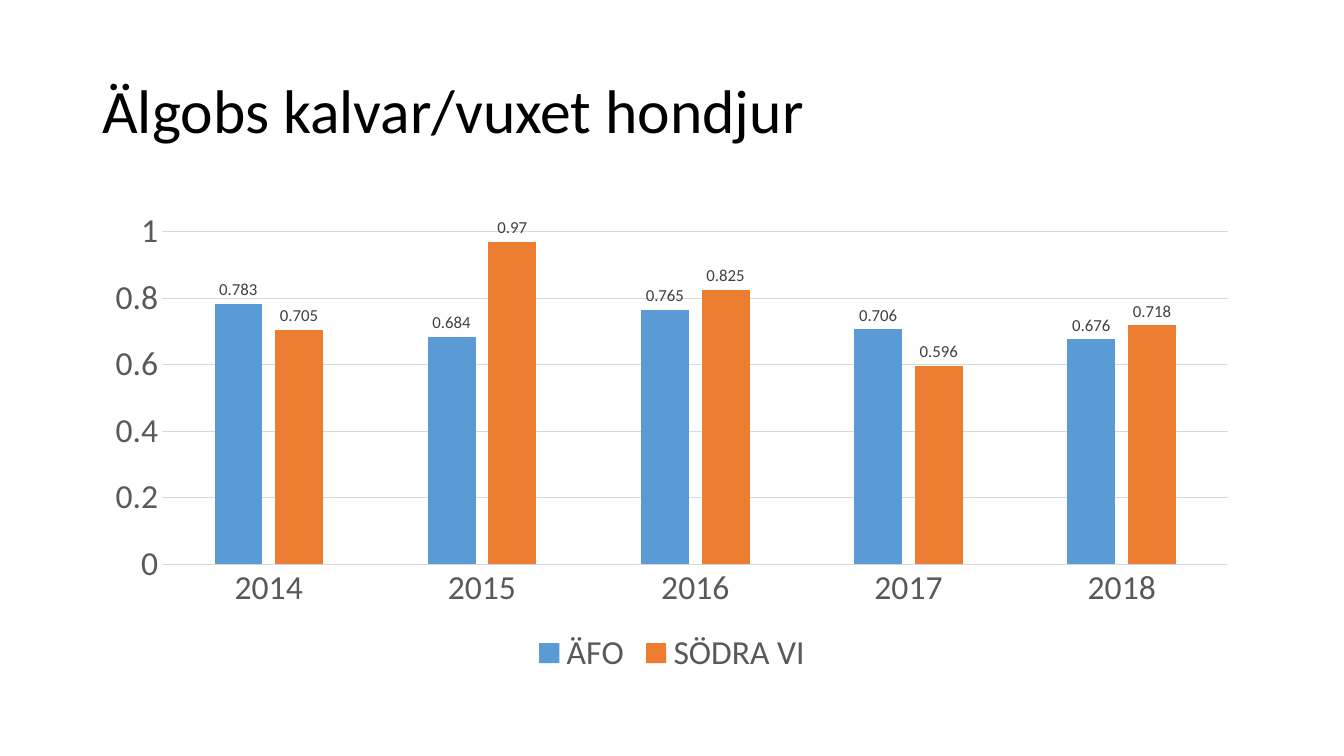
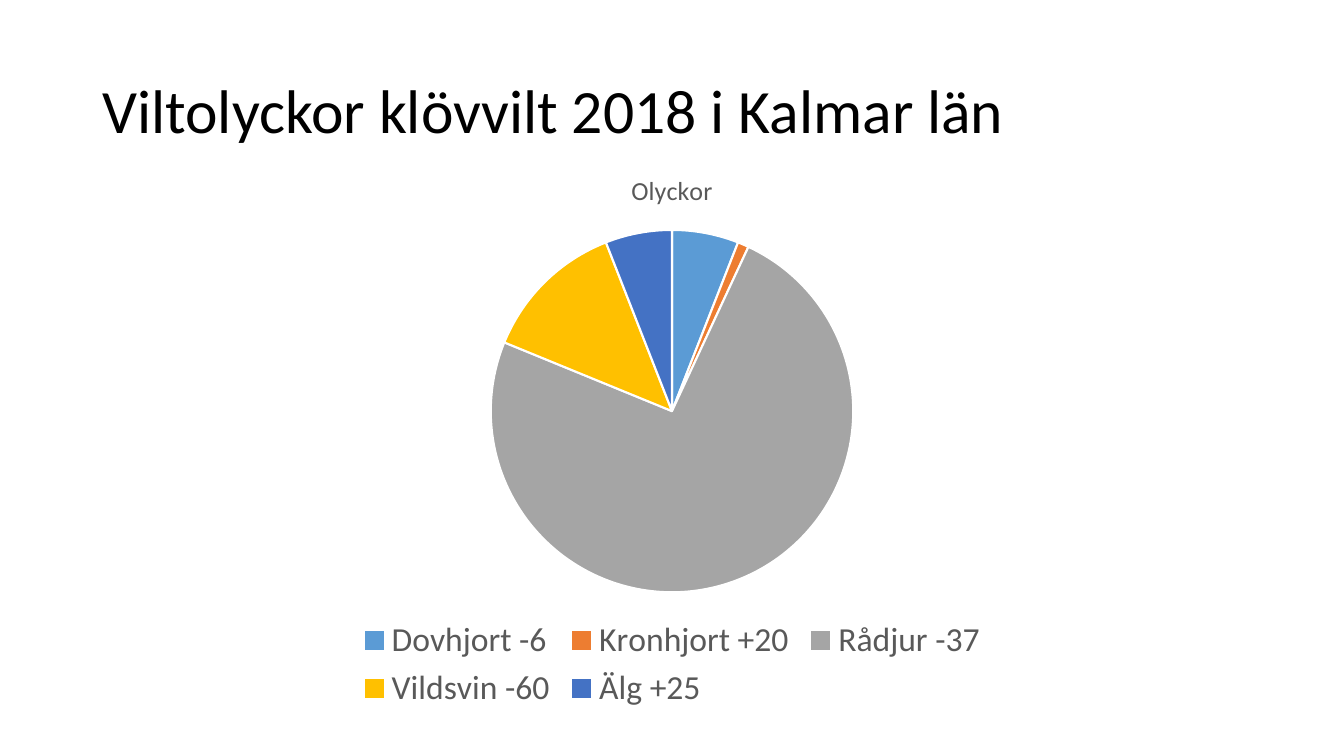
import pptx
import pptx.chart.data
import pptx.dml.color
import pptx.enum.chart
import pptx.enum.text
import pptx.util

# Shared look
FONT = "Calibri"
COLORS = {
    "ink": "000000", "text": "595959", "label": "404040", "rule": "D9D9D9",
    "paper": "FFFFFF", "blue": "5B9BD5", "orange": "ED7D31", "grey": "A5A5A5",
    "gold": "FFC000", "navy": "4472C4",
}
SLIDE_WIDTH, SLIDE_HEIGHT = pptx.util.Inches(13.33), pptx.util.Inches(7.5)
COLUMNS, ROWS = 160, 150
LEFT_COLUMN, CONTENT_COLUMNS = 11, 138
TITLE_ROW, TITLE_ROWS = 8, 29


def rgb(name):
    return pptx.dml.color.RGBColor.from_string(COLORS[name])


def content_area(row, row_count):
    """Left, top, width and height of a full-width area on the slide grid."""
    return (SLIDE_WIDTH * LEFT_COLUMN // COLUMNS, SLIDE_HEIGHT * row // ROWS,
            SLIDE_WIDTH * CONTENT_COLUMNS // COLUMNS,
            SLIDE_HEIGHT * row_count // ROWS)


# Text
def style_font(font, size, color):
    font.name = FONT
    font.size = pptx.util.Pt(size)
    font.bold = False
    font.color.rgb = rgb(color)


def write_text(frame, text, *, size, color, line_spacing=None):
    para = frame.paragraphs[0]
    para.line_spacing = line_spacing
    span = para.add_run()
    span.text = text
    style_font(span.font, size, color)


def add_titled_page(deck, title):
    page = deck.slides.add_slide(deck.slide_layouts[6])
    box = page.shapes.add_textbox(*content_area(TITLE_ROW, TITLE_ROWS))
    frame = box.text_frame
    frame.word_wrap = True
    frame.vertical_anchor = pptx.enum.text.MSO_ANCHOR.MIDDLE
    write_text(frame, title, size=44, color="ink", line_spacing=0.9)
    return page


# Charts
def add_chart(page, kind, area, categories, series):
    data = pptx.chart.data.CategoryChartData()
    data.categories = categories
    for name, values in series:
        data.add_series(name, values)
    chart = page.shapes.add_chart(kind, *area, data).chart
    style_font(chart.font, 10, "ink")
    chart.has_title = False
    chart.has_legend = True
    chart.legend.position = pptx.enum.chart.XL_LEGEND_POSITION.BOTTOM
    chart.legend.include_in_layout = False
    style_font(chart.legend.font, 24, "text")
    return chart


def style_rule(line):
    line.color.rgb = rgb("rule")
    line.width = pptx.util.Pt(0.75)


def fill_solid(part, color):
    part.format.fill.solid()
    part.format.fill.fore_color.rgb = rgb(color)


def style_axes(chart, maximum, step):
    for axis in (chart.category_axis, chart.value_axis):
        axis.major_tick_mark = pptx.enum.chart.XL_TICK_MARK.NONE
        axis.minor_tick_mark = pptx.enum.chart.XL_TICK_MARK.NONE
        style_font(axis.tick_labels.font, 24, "text")
    style_rule(chart.category_axis.format.line)
    value_axis = chart.value_axis
    value_axis.format.line.fill.background()
    value_axis.minimum_scale = 0
    value_axis.maximum_scale = maximum
    value_axis.major_unit = step
    value_axis.has_major_gridlines = True
    style_rule(value_axis.major_gridlines.format.line)


def add_column_chart(page, area, categories, series, colors):
    chart = add_chart(page, pptx.enum.chart.XL_CHART_TYPE.COLUMN_CLUSTERED,
                      area, categories, series)
    style_axes(chart, maximum=1, step=0.2)
    plot = chart.plots[0]
    plot.vary_by_categories = False
    plot.gap_width = 219
    plot.overlap = -27
    for columns, color in zip(plot.series, colors):
        fill_solid(columns, color)
        labels = columns.data_labels
        labels.show_value = True
        labels.position = pptx.enum.chart.XL_LABEL_POSITION.OUTSIDE_END
        style_font(labels.font, 12, "label")


def add_pie_chart(page, area, name, slices):
    categories, values, colors = zip(*slices)
    chart = add_chart(page, pptx.enum.chart.XL_CHART_TYPE.PIE,
                      area, categories, [(name, values)])
    write_text(chart.chart_title.text_frame, name, size=18.6, color="text")
    chart.chart_title.include_in_layout = False
    plot = chart.plots[0]
    plot.vary_by_categories = True
    for index, color in enumerate(colors):
        point = plot.series[0].points[index]
        fill_solid(point, color)
        point.format.line.color.rgb = rgb("paper")
        point.format.line.width = pptx.util.Pt(1.5)


def main():
    deck = pptx.Presentation()
    deck.slide_width, deck.slide_height = SLIDE_WIDTH, SLIDE_HEIGHT

    # Calves per adult female
    page = add_titled_page(deck, "Älgobs kalvar/vuxet hondjur")
    add_column_chart(
        page, content_area(40, 95), [str(year) for year in range(2014, 2019)],
        [("ÄFO", (0.783, 0.684, 0.765, 0.706, 0.676)),
         ("SÖDRA VI", (0.705, 0.97, 0.825, 0.596, 0.718))],
        ("blue", "orange"))

    # Wildlife accidents by species
    page = add_titled_page(deck, "Viltolyckor klövvilt 2018 i Kalmar län")
    add_pie_chart(page, content_area(30, 112), "Olyckor", [
        ("Dovhjort -6", 6, "blue"),
        ("Kronhjort +20", 1, "orange"),
        ("Rådjur -37", 75, "grey"),
        ("Vildsvin -60", 13, "gold"),
        ("Älg +25", 6, "navy"),
    ])

    deck.save("out.pptx")


if __name__ == "__main__":
    main()
